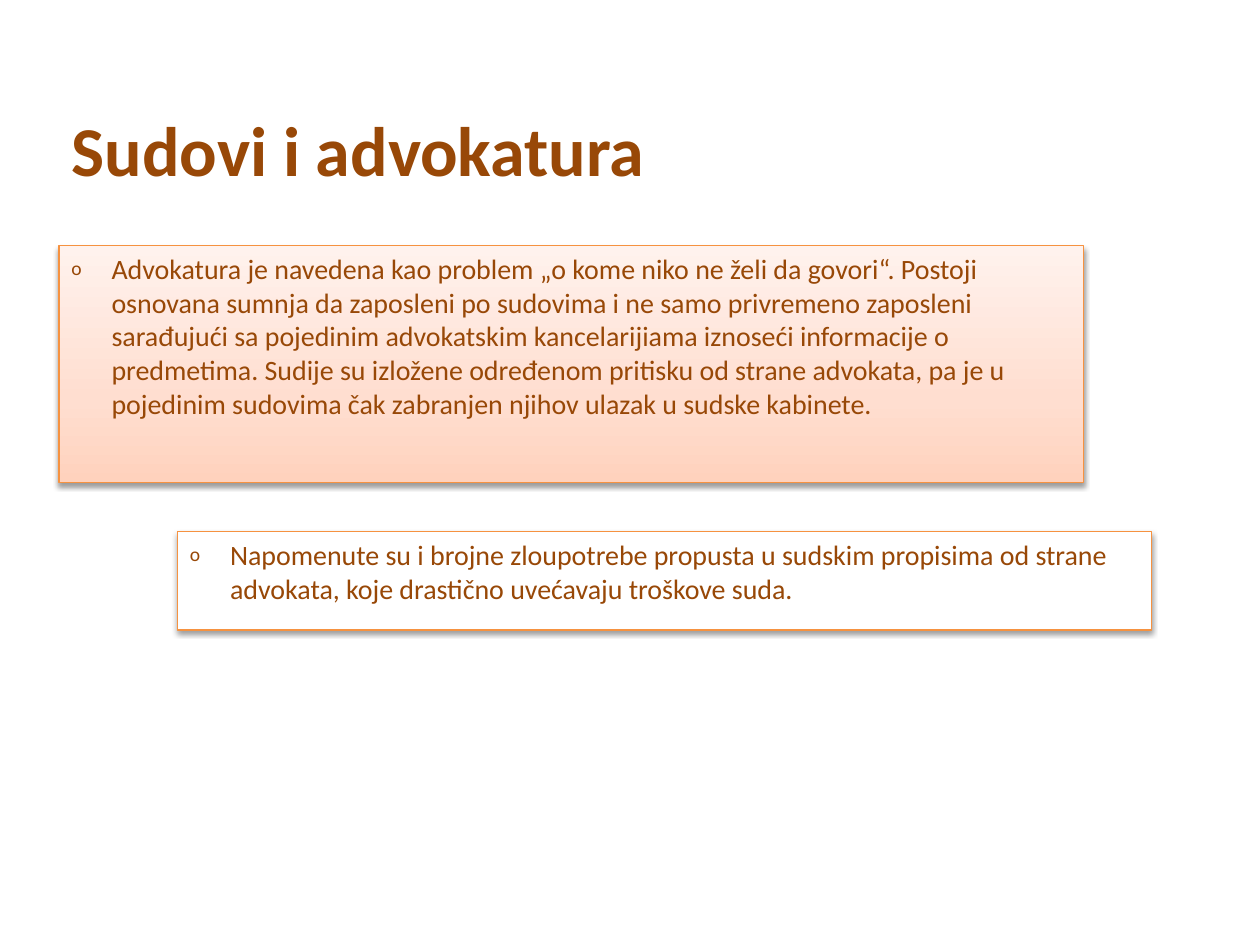
from lxml import etree
from pptx import Presentation
from pptx.dml.color import RGBColor
from pptx.enum import shapes, text
from pptx.oxml import parse_xml
from pptx.oxml.ns import nsdecls, qn
from pptx.util import Cm, Pt

FONT = "Calibri"
BROWN = "984807"
ORANGE = "F69240"
WHITE = "FFFFFF"
PEACH = [(0, "FFD2BD"), (35, "FFDED0"), (100, "FFF2ED")]

COURT = (
    "Advokatura je navedena kao problem „o kome niko ne želi da govori“. "
    "Postoji osnovana sumnja da zaposleni po sudovima i ne samo privremeno "
    "zaposleni sarađujući sa pojedinim advokatskim kancelarijiama iznoseći "
    "informacije o predmetima. Sudije su izložene određenom pritisku od strane "
    "advokata, pa je u pojedinim sudovima čak zabranjen njihov ulazak u sudske "
    "kabinete."
)
ABUSE = (
    "Napomenute su i brojne zloupotrebe propusta u sudskim propisima od strane "
    "advokata, koje drastično uvećavaju troškove suda."
)


def color(code):
    return RGBColor.from_string(code)


def add_run(para, words, size, bold=False):
    run = para.add_run()
    run.text = words
    font = run.font
    font.name, font.size, font.bold = FONT, Pt(size), bold
    font.color.rgb = color(BROWN)


def place(shape, left, top, width, height):
    shape.left, shape.top = Cm(left), Cm(top)
    shape.width, shape.height = Cm(width), Cm(height)


def add_title(slide, words):
    title = slide.shapes.title
    place(title, 1.19, 1.4, 22.86, 3.18)
    frame = title.text_frame
    frame.vertical_anchor = text.MSO_ANCHOR.MIDDLE
    para = frame.paragraphs[0]
    para.alignment = text.PP_ALIGN.LEFT
    add_run(para, words, 40, True)


def fade(shape, stops):
    """Fill a shape with a gradient that runs from bottom to top."""
    shape.fill.background()
    marks = "".join(
        f'<a:gs pos="{pos * 1000}"><a:srgbClr val="{code}"/></a:gs>'
        for pos, code in stops
    )
    grad = parse_xml(
        f'<a:gradFill {nsdecls("a")} rotWithShape="1"><a:gsLst>{marks}</a:gsLst>'
        '<a:lin ang="16200000" scaled="0"/></a:gradFill>'
    )
    props = shape._element.spPr
    props.replace(props.find(qn("a:noFill")), grad)


def add_shade(shape):
    """Give a shape a soft shadow just below it."""
    shape.shadow.inherit = False
    effect = shape._element.spPr.find(qn("a:effectLst"))
    effect.append(parse_xml(
        f'<a:outerShdw {nsdecls("a")} blurRad="{Pt(3.1)}" dist="{Pt(1.6)}" '
        'dir="5400000" rotWithShape="0"><a:srgbClr val="000000">'
        '<a:alpha val="38000"/></a:srgbClr></a:outerShdw>'
    ))


def add_bullet(para):
    props = para._p.get_or_add_pPr()
    props.set("marL", str(Cm(0.81)))
    props.set("indent", str(-Cm(0.81)))
    tint = etree.SubElement(props, qn("a:buClr"))
    etree.SubElement(tint, qn("a:srgbClr"), val=BROWN)
    etree.SubElement(props, qn("a:buSzPct"), val="70000")
    etree.SubElement(props, qn("a:buFont"), typeface=FONT)
    etree.SubElement(props, qn("a:buChar"), char="o")


def add_panel(slide, spot, words, stops=None):
    kind = shapes.MSO_SHAPE.RECTANGLE
    panel = slide.shapes.add_shape(kind, *map(Cm, spot))
    if stops:
        fade(panel, stops)
    else:
        panel.fill.solid()
        panel.fill.fore_color.rgb = color(WHITE)
    panel.line.color.rgb = color(ORANGE)
    panel.line.width = Pt(0.75)
    add_shade(panel)
    frame = panel.text_frame
    frame.word_wrap = True
    frame.vertical_anchor = text.MSO_ANCHOR.TOP
    para = frame.paragraphs[0]
    para.alignment = text.PP_ALIGN.LEFT
    add_bullet(para)
    add_run(para, words, 16)


def main():
    deck = Presentation()
    deck.slide_width, deck.slide_height = Cm(25.4), Cm(19.05)
    slide = deck.slides.add_slide(deck.slide_layouts[5])

    # Heading
    add_title(slide, "Sudovi i advokatura")

    # Text panels
    add_panel(slide, (1.19, 4.95, 20.65, 4.78), COURT, PEACH)
    add_panel(slide, (3.58, 10.72, 19.63, 1.98), ABUSE)

    deck.save("out.pptx")


if __name__ == "__main__":
    main()
